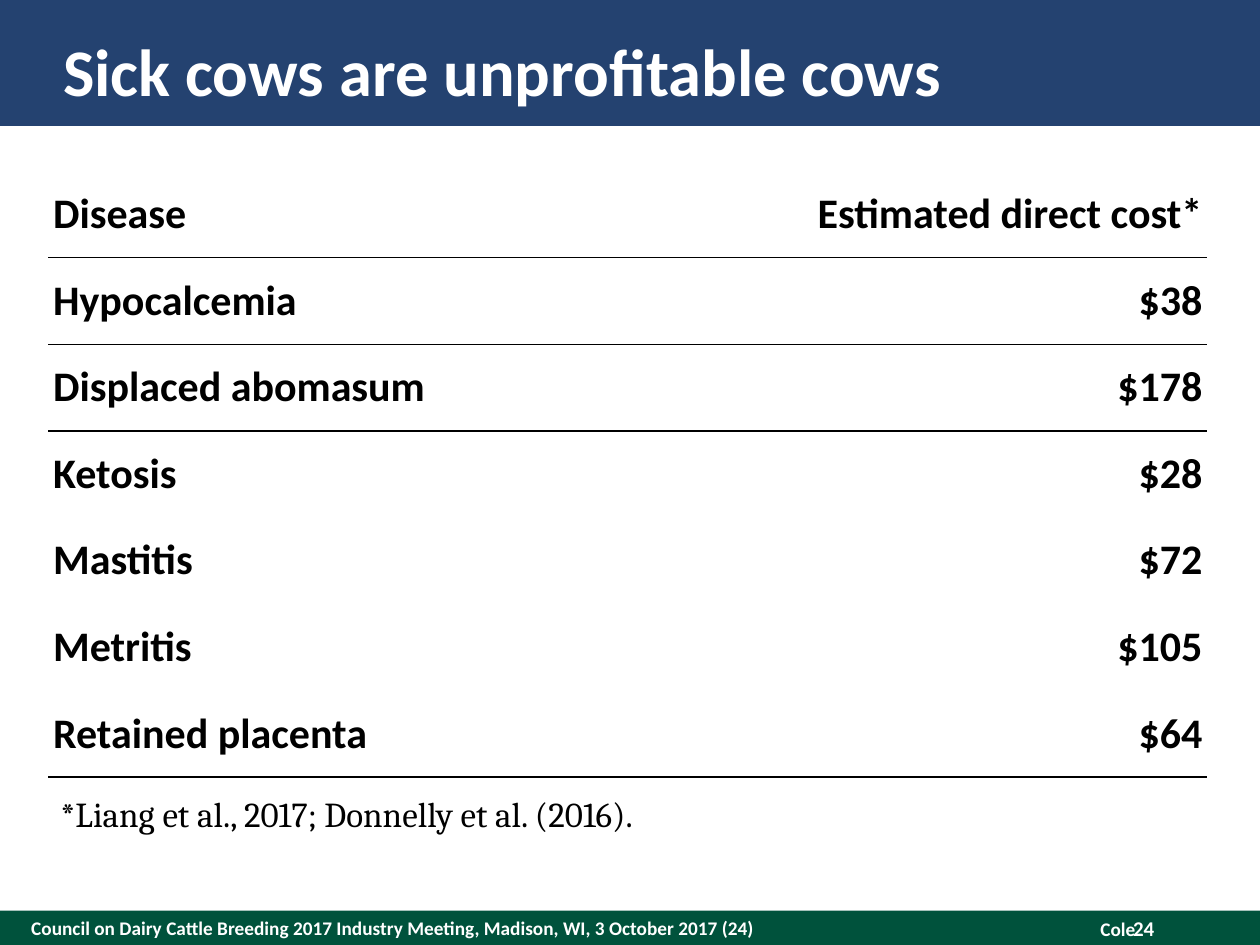
from dataclasses import dataclass

from lxml.etree import SubElement
from pptx import Presentation
from pptx.dml.color import RGBColor
from pptx.enum.shapes import MSO_SHAPE as Shape
from pptx.enum.text import MSO_ANCHOR as Anchor, MSO_AUTO_SIZE as Fit, PP_ALIGN as Align
from pptx.oxml.ns import qn
from pptx.util import Cm, Pt

WHITE, BLACK, GREEN, NAVY = "FFFFFF", "000000", "00523C", "244270"
PLAIN = "{2D5ABB26-0587-4C30-8999-92F81FD0307C}"  # table style without grid


@dataclass
class Box:
    left: float
    top: float
    width: float
    height: float

    def spread(self) -> tuple:
        return Cm(self.left), Cm(self.top), Cm(self.width), Cm(self.height)


@dataclass
class Cost:
    name: str
    price: str
    ruled: bool = False


def paint(color: str) -> RGBColor:
    return RGBColor.from_string(color)


def write(frame, text: str, size=24, font="Calibri", color=BLACK, bold=True,
          align=Align.LEFT) -> None:
    para = frame.paragraphs[0]
    para.alignment = align
    run = para.add_run()
    run.text = text
    run.font.size, run.font.name, run.font.bold = Pt(size), font, bold
    run.font.color.rgb = paint(color)


def flatten(frame) -> None:
    frame.margin_left = frame.margin_right = 0
    frame.margin_top = frame.margin_bottom = 0
    frame.vertical_anchor = Anchor.MIDDLE


def add_band(slide, box: Box, color: str) -> None:
    band = slide.shapes.add_shape(Shape.RECTANGLE, *box.spread())
    band.shadow.inherit = False
    band.fill.solid()
    band.fill.fore_color.rgb = paint(color)
    band.line.fill.background()


def add_text(slide, box: Box, text: str, flat=False, **form) -> None:
    frame = slide.shapes.add_textbox(*box.spread()).text_frame
    frame.word_wrap = True
    if flat:
        flatten(frame)
    else:
        frame.auto_size = Fit.SHAPE_TO_FIT_TEXT
    write(frame, text, **form)


def add_rule(cell, side: str) -> None:
    props = cell._tc.get_or_add_tcPr()
    line = SubElement(props, qn(f"a:{side}"), w=str(Pt(1)))
    fill = SubElement(line, qn("a:solidFill"))
    SubElement(fill, qn("a:srgbClr"), val=BLACK)


def add_costs(slide, box: Box, costs: list[Cost]) -> None:
    table = slide.shapes.add_table(len(costs), 2, *box.spread()).table
    table.first_row = table.horz_banding = False
    table._tbl.tblPr.find(qn("a:tableStyleId")).text = PLAIN
    for i, cost in enumerate(costs):
        pairs = ((cost.name, Align.LEFT), (cost.price, Align.RIGHT))
        for j, (text, align) in enumerate(pairs):
            cell = table.cell(i, j)
            cell.margin_left = cell.margin_right = Cm(0.1)
            cell.margin_top = cell.margin_bottom = Cm(0.05)
            cell.vertical_anchor = Anchor.MIDDLE
            # A rule belongs to the cells on both of its sides
            if i and costs[i - 1].ruled:
                add_rule(cell, "lnT")
            if cost.ruled:
                add_rule(cell, "lnB")
            cell.fill.background()
            write(cell.text_frame, text, align=align)


COSTS = [
    Cost("Disease", "Estimated direct cost*", ruled=True),
    Cost("Hypocalcemia", "$38", ruled=True),
    Cost("Displaced abomasum", "$178"),
    Cost("Ketosis", "$28"),
    Cost("Mastitis", "$72"),
    Cost("Metritis", "$105"),
    Cost("Retained placenta", "$64", ruled=True),
]


def main() -> None:
    deck = Presentation()
    deck.slide_width, deck.slide_height = Cm(25.4), Cm(19.05)
    slide = deck.slides.add_slide(deck.slide_layouts[5])

    # Header and footer bands
    add_band(slide, Box(0, 18.36, 25.4, 0.69), GREEN)
    add_band(slide, Box(0, 0, 25.4, 2.54), NAVY)

    # Footer text
    foot = dict(size=11, color=WHITE)
    add_text(slide, Box(0.63, 18.36, 17.78, 0.69),
             "Council on Dairy Cattle Breeding 2017 Industry Meeting, "
             "Madison, WI, 3 October 2017 (24)", flat=True, **foot)
    add_text(slide, Box(18.06, 18.36, 5.08, 0.74), "Cole", align=Align.RIGHT, **foot)
    add_text(slide, Box(17.35, 18.36, 5.92, 0.69), "24", flat=True, size=12,
             color=WHITE, align=Align.RIGHT)

    # Title, brought in front of the header band
    title = slide.shapes.title
    title.left, title.top, title.width, title.height = Box(1.27, 0.51, 22.86, 1.78).spread()
    flatten(title.text_frame)
    write(title.text_frame, "Sick cows are unprofitable cows", size=38, color=WHITE)
    slide.shapes._spTree.append(title._element)

    # Disease costs and their source
    add_costs(slide, Box(0.97, 3.45, 23.37, 12.22), COSTS)
    add_text(slide, Box(0.97, 15.85, 23.16, 1.12),
             "*Liang et al., 2017; Donnelly et al. (2016).",
             size=20, font="Cambria", bold=False)

    deck.save("out.pptx")


if __name__ == "__main__":
    main()
